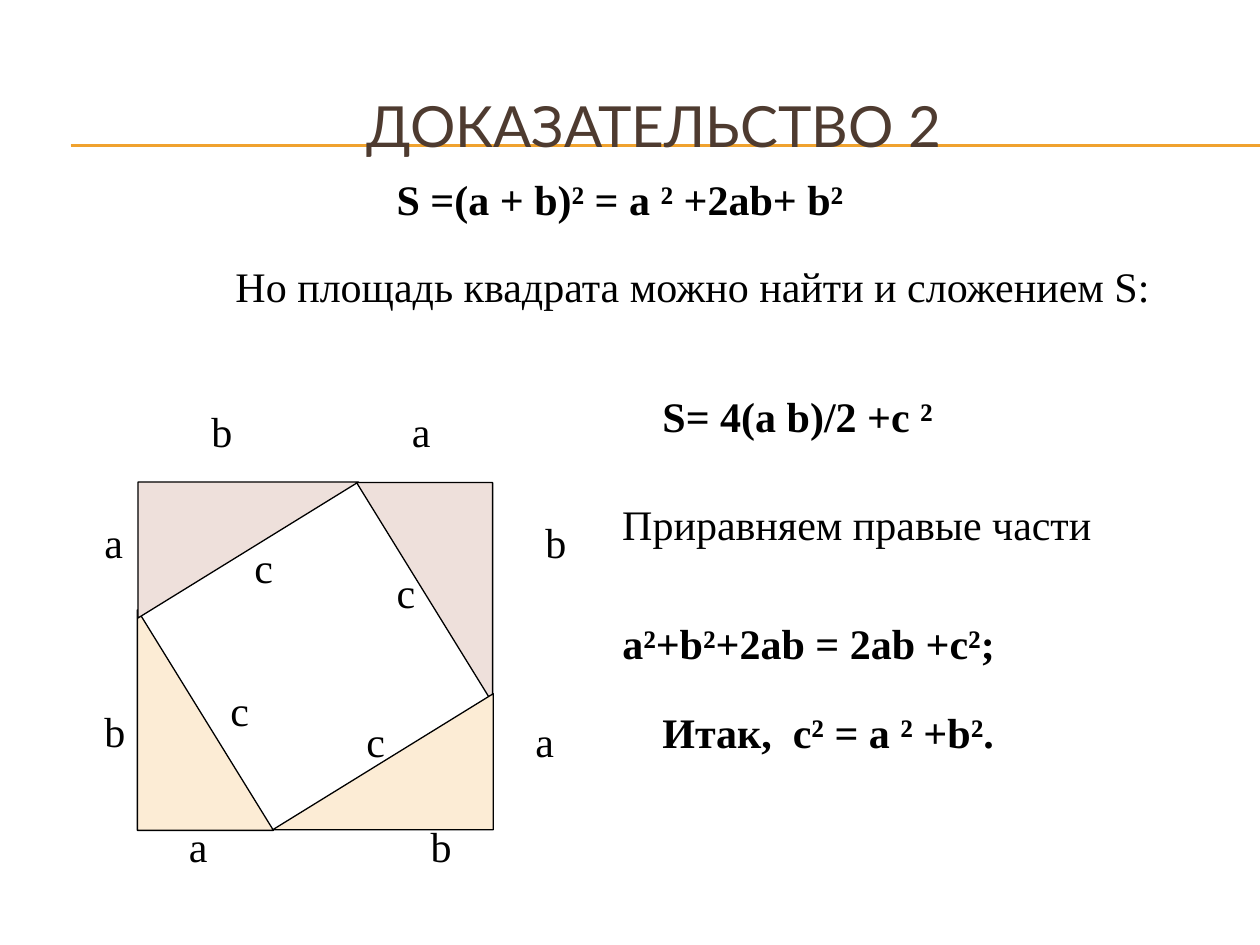
from lxml import etree
from pptx import Presentation
from pptx.dml.color import RGBColor
from pptx.enum.shapes import MSO_CONNECTOR, MSO_SHAPE
from pptx.enum.text import MSO_ANCHOR, MSO_AUTO_SIZE, PP_ALIGN
from pptx.oxml.ns import qn
from pptx.util import Inches, Pt

LINE = MSO_CONNECTOR.STRAIGHT
TRI = MSO_SHAPE.RIGHT_TRIANGLE
MID, TOP = MSO_ANCHOR.MIDDLE, MSO_ANCHOR.TOP
LEFT = PP_ALIGN.LEFT
GROW, FIXED = MSO_AUTO_SIZE.SHAPE_TO_FIT_TEXT, MSO_AUTO_SIZE.NONE

COLORS = {"rule": "F0A22E", "title": "4E3B30", "ink": "000000",
          "sand": "FCECD5", "rose": "EEE0DB"}
TITLE = "ДОКАЗАТЕЛЬСТВО 2"
RULES = [1.15, 1.16]
WIDTHS = {"а": 0.35, "b": 0.37, "с": 0.35}
LABELS = [
    ("а", 1.4, 6.46), ("b", 0.73, 5.55), ("с", 1.73, 5.38),
    ("b", 3.32, 6.46), ("а", 4.15, 5.63), ("а", 0.73, 4.05),
    ("b", 1.58, 3.17), ("а", 3.17, 3.17), ("b", 4.23, 4.05),
    ("с", 1.92, 4.25), ("с", 3.05, 4.45), ("с", 2.81, 5.63),
]
STEPS = [
    ("S =(а + b)² = а ² +2аb+ b²", 3.05, 1.33, 4.26, True, True),
    ("Но площадь квадрата можно найти и сложением S:",
     1.77, 2.02, 7.92, False, True),
    ("S= 4(а b)/2 +с ²", 5.16, 3.05, 2.37, True, False),
    ("Приравняем правые части", 4.84, 3.91, 4.93, False, True),
    ("а²+b²+2аb = 2аb +с²;", 4.84, 4.85, 4.08, True, True),
    ("Итак,  с² = а ² +b².", 5.16, 5.56, 2.86, True, False),
]
SHORT, LONG = 1.08, 1.75
TURNS = [
    (1.09, 4.84, 0, "sand"), (2.83, 3.83, 180, "rose"),
    (1.43, 3.49, 90, "rose"), (2.5, 5.17, 270, "sand"),
]


def paint(name):
    return RGBColor.from_string(COLORS[name])


def write(shape, text, font, size, color, bold=False, wrap=True,
          anchor=TOP, fit=GROW):
    frame = shape.text_frame
    frame.word_wrap = wrap
    frame.auto_size = fit
    frame.vertical_anchor = anchor
    para = frame.paragraphs[0]
    para.alignment = LEFT
    run = para.add_run()
    run.text = text
    run.font.name = font
    run.font.size = Pt(size)
    run.font.bold = bold
    run.font.color.rgb = paint(color)


def add_text(shapes, text, left, top, width, bold=False, wrap=False):
    box = shapes.add_textbox(Inches(left), Inches(top),
                             Inches(width), Inches(0.5))
    write(box, text, "Times New Roman", 24, "ink", bold, wrap)


def add_rule(shapes, head, y):
    rule = shapes.add_connector(LINE, Inches(0.56), Inches(y),
                                Inches(10), Inches(y))
    rule.line.color.rgb = paint("rule")
    rule.line.width = Pt(0.75)
    etree.SubElement(rule.element.spPr, qn("a:effectLst"))
    head.element.addprevious(rule.element)


def add_tri(shapes, left, top, turn, color):
    tri = shapes.add_shape(TRI, Inches(left), Inches(top),
                           Inches(SHORT), Inches(LONG))
    tri.rotation = turn
    tri.shadow.inherit = False
    tri.fill.solid()
    tri.fill.fore_color.rgb = paint(color)
    tri.line.color.rgb = paint("ink")
    tri.line.width = Pt(0.75)


def main():
    deck = Presentation()
    deck.slide_width, deck.slide_height = Inches(10), Inches(7.5)
    shapes = deck.slides.add_slide(deck.slide_layouts[5]).shapes

    head = shapes.title
    head.left, head.top = Inches(2.81), Inches(0.7)
    head.width, head.height = Inches(4.91), Inches(0.58)
    write(head, TITLE, "Lato", 32.4, "title", anchor=MID, fit=FIXED)

    for y in RULES:
        add_rule(shapes, head, y)
    for text, left, top in LABELS:
        add_text(shapes, text, left, top, WIDTHS[text])
    for step in STEPS:
        add_text(shapes, *step)
    for turn in TURNS:
        add_tri(shapes, *turn)
    deck.save("out.pptx")


if __name__ == "__main__":
    main()
